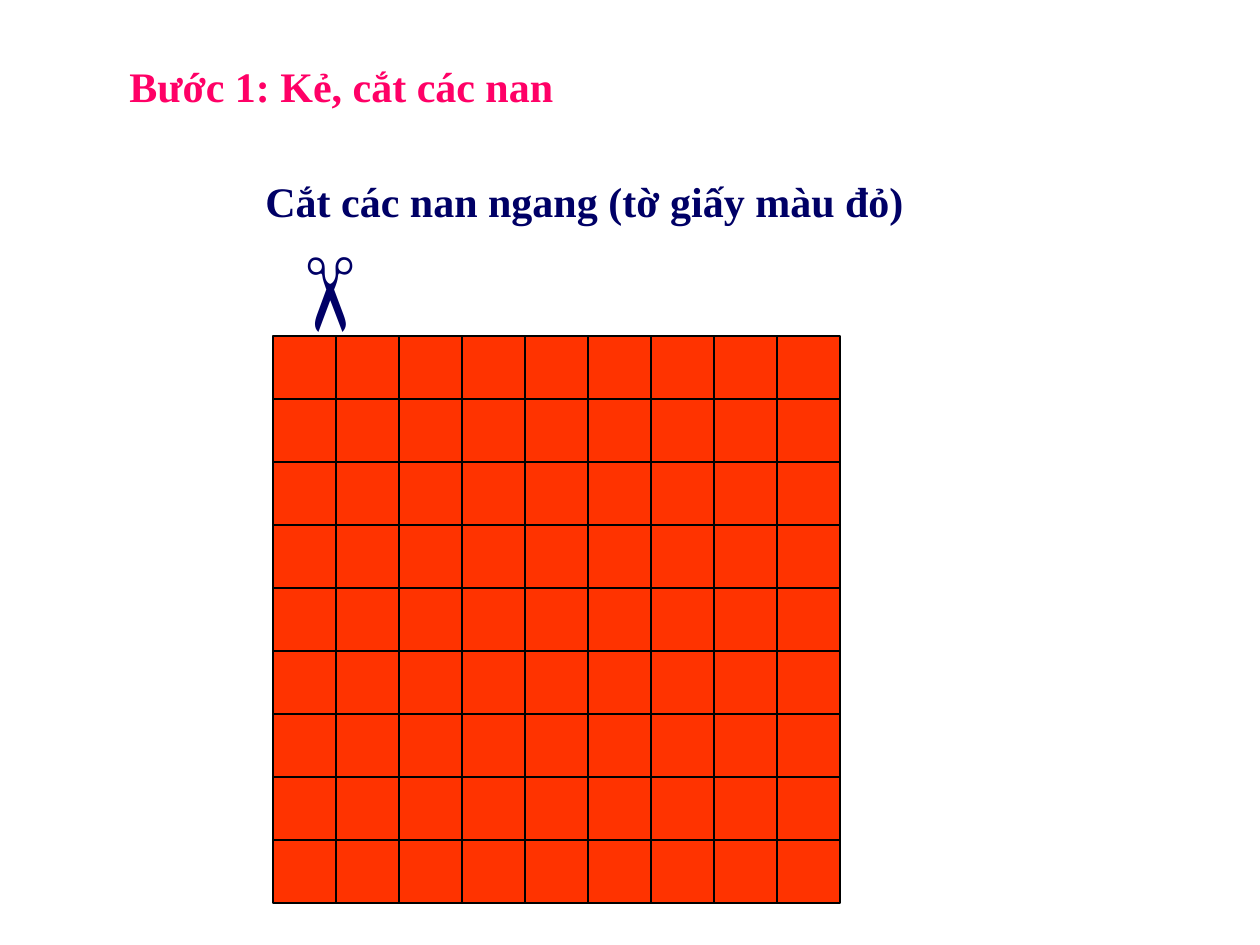
from pptx import Presentation
from pptx import util as u
from pptx.dml.color import RGBColor
from pptx.enum import shapes, text

PX = u.Inches(1) // 126
GRID_LEFT, GRID_TOP = 273, 336
CELL, COUNT = 63, 9
RED, BLACK, NAVY, PINK = "FF3300", "000000", "000066", "FF0066"


def color(code):
    return RGBColor.from_string(code)


def box(*sizes):
    return [size * PX for size in sizes]


def add_text(slide, words, place, ink, size=24, font="Times New Roman",
             wrap=True, anchor=text.MSO_ANCHOR.TOP, before=2, turn=0):
    shape = slide.shapes.add_textbox(*box(*place))
    shape.rotation = turn
    frame = shape.text_frame
    frame.word_wrap = wrap
    frame.auto_size = text.MSO_AUTO_SIZE.SHAPE_TO_FIT_TEXT
    frame.vertical_anchor = anchor
    line = frame.paragraphs[0]
    line.space_before = u.Pt(before)
    run = line.add_run()
    run.text = words
    run.font.name = font
    run.font.size = u.Pt(size)
    run.font.bold = True
    run.font.color.rgb = color(ink)


def add_cell(group, left, top):
    cell = group.shapes.add_shape(shapes.MSO_SHAPE.RECTANGLE,
                                  *box(left, top, CELL, CELL))
    cell.shadow.inherit = False
    cell.fill.solid()
    cell.fill.fore_color.rgb = color(RED)
    cell.line.color.rgb = color(BLACK)
    cell.line.width = u.Pt(0.75)


def add_paper(slide):
    """Draw the square sheet of red paper, ruled into cells."""
    group = slide.shapes.add_group_shape()
    for row in range(COUNT):
        for col in range(COUNT):
            add_cell(group, GRID_LEFT + col * CELL, GRID_TOP + row * CELL)


def main():
    deck = Presentation()
    deck.slide_width, deck.slide_height = box(1260, 945)
    slide = deck.slides.add_slide(deck.slide_layouts[6])
    add_paper(slide)
    add_text(slide, "✂", (263, 257, 145, 113), NAVY, size=48, font="Calibri",
             wrap=False, anchor=text.MSO_ANCHOR.MIDDLE, before=0, turn=90)
    add_text(slide, "Cắt các nan ngang (tờ giấy màu đỏ)",
             (253, 169, 765, 63), NAVY)
    add_text(slide, "Bước 1: Kẻ, cắt các nan", (117, 54, 554, 63), PINK)
    deck.save("out.pptx")


if __name__ == "__main__":
    main()
